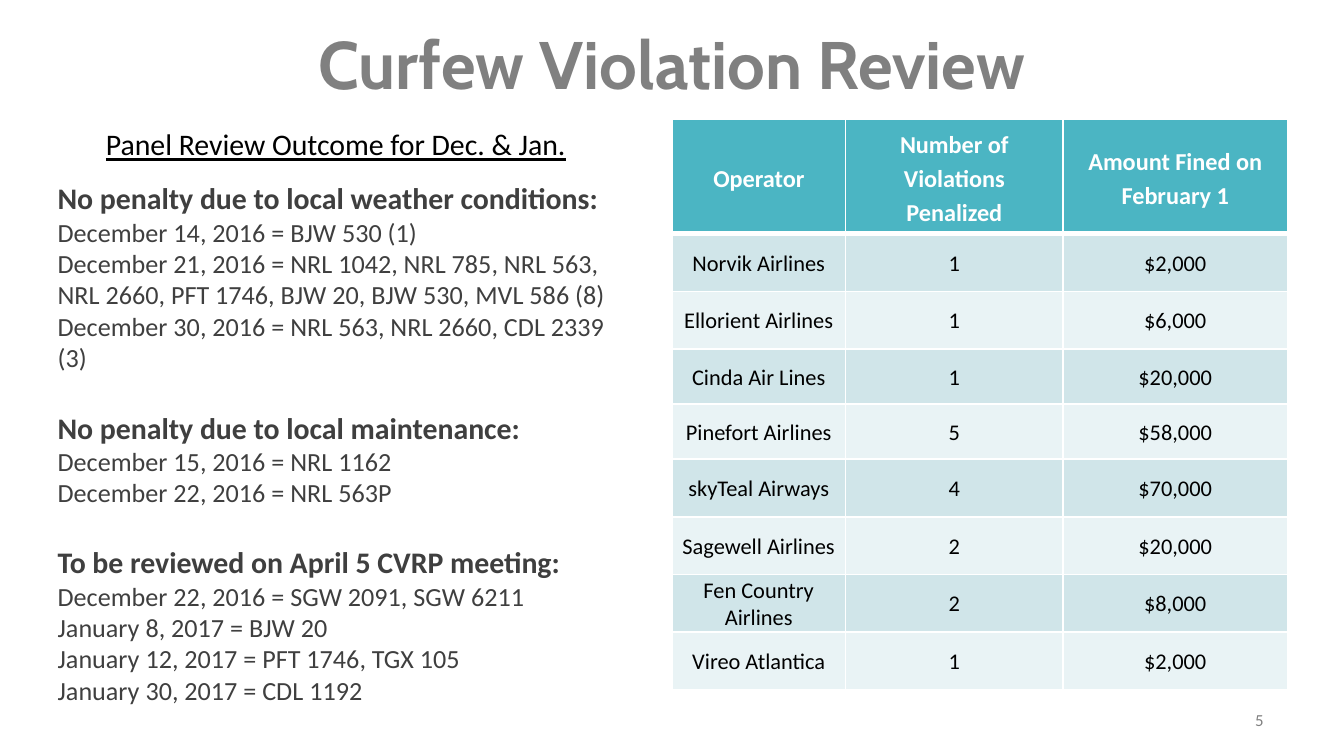
from lxml import etree
from pptx import Presentation
from pptx.dml.color import RGBColor
from pptx.enum.text import MSO_ANCHOR, PP_ALIGN
from pptx.oxml.ns import qn
from pptx.util import Cm, Pt

LEFT, CENTER, RIGHT = PP_ALIGN.LEFT, PP_ALIGN.CENTER, PP_ALIGN.RIGHT
TOP, MIDDLE = MSO_ANCHOR.TOP, MSO_ANCHOR.MIDDLE
COLORS = {
    "gray": "808080",
    "body": "3F3F3F",
    "black": "000000",
    "white": "FFFFFF",
    "header": "4BB5C3",
    "odd": "D0E5E9",
    "even": "E9F3F5",
}


def add_run(paragraph, text, size, color, align=LEFT, bold=False, font="Calibri"):
    paragraph.alignment = align
    run = paragraph.add_run()
    run.text = text
    run.font.name = font
    run.font.size = Pt(size)
    run.font.bold = bold
    run.font.color.rgb = RGBColor.from_string(COLORS[color])
    return run


def add_text_frame(slide, left, top, width, height, anchor=TOP):
    box = slide.shapes.add_textbox(Cm(left), Cm(top), Cm(width), Cm(height))
    box.text_frame.word_wrap = True
    box.text_frame.vertical_anchor = anchor
    return box.text_frame


prs = Presentation()
prs.slide_width, prs.slide_height = Cm(25.4), Cm(14.29)
slide = prs.slides.add_slide(prs.slide_layouts[6])

title = add_text_frame(slide, 0, 0, 25.4, 2.38, MIDDLE)
add_run(title.paragraphs[0], "Curfew Violation Review", 36, "gray", CENTER, True, "Cabin")

page_number = add_text_frame(slide, 18.2, 13.23, 5.93, 0.76, MIDDLE)
add_run(page_number.paragraphs[0], "5", 9, "gray", RIGHT)

subtitle = add_text_frame(slide, 0, 2.26, 12.7, 0.91)
heading = add_run(subtitle.paragraphs[0], "Panel Review Outcome for Dec. & Jan.", 16, "black", CENTER)
heading.font.underline = True

outcomes = [
    ("No penalty due to local weather conditions:", [
        "December 14, 2016 = BJW 530 (1)",
        "December 21, 2016 = NRL 1042, NRL 785, NRL 563, NRL 2660, PFT 1746, BJW 20, BJW 530, MVL 586 (8)",
        "December 30, 2016 = NRL 563, NRL 2660, CDL 2339 (3)",
    ]),
    ("No penalty due to local maintenance:", [
        "December 15, 2016 = NRL 1162",
        "December 22, 2016 = NRL 563P",
    ]),
    ("To be reviewed on April 5 CVRP meeting:", [
        "December 22, 2016 = SGW 2091, SGW 6211",
        "January 8, 2017 = BJW 20",
        "January 12, 2017 = PFT 1746, TGX 105",
        "January 30, 2017 = CDL 1192",
    ]),
]
review = add_text_frame(slide, 0.84, 3.28, 11.23, 10.26)
for index, (reason, flights) in enumerate(outcomes):
    paragraph = review.add_paragraph() if index else review.paragraphs[0]
    if index:
        paragraph.space_before = Pt(19.5)
    add_run(paragraph, reason, 16, "body", bold=True)
    for flight in flights:
        add_run(review.add_paragraph(), flight, 14, "body")

fines = [
    ("Operator", "Number of Violations Penalized", "Amount Fined on February 1"),
    ("Norvik Airlines", "1", "$2,000"),
    ("Ellorient Airlines", "1", "$6,000"),
    ("Cinda Air Lines", "1", "$20,000"),
    ("Pinefort Airlines", "5", "$58,000"),
    ("skyTeal Airways", "4", "$70,000"),
    ("Sagewell Airlines", "2", "$20,000"),
    ("Fen Country Airlines", "2", "$8,000"),
    ("Vireo Atlantica", "1", "$2,000"),
]
column_widths = [3.28, 4.11, 4.24]
row_heights = [2.16, 1.09, 1.09, 1.04, 1.04, 1.09, 1.09, 1.09, 1.09]
fine_table = slide.shapes.add_table(
    len(fines), len(column_widths), Cm(12.7), Cm(2.26),
    Cm(sum(column_widths)), Cm(sum(row_heights))).table
for column, width in zip(fine_table.columns, column_widths):
    column.width = Cm(width)

for row, (entries, height) in enumerate(zip(fines, row_heights)):
    fine_table.rows[row].height = Cm(height)
    is_header = row == 0
    for col, entry in enumerate(entries):
        cell = fine_table.cell(row, col)
        cell.vertical_anchor = MIDDLE
        if not is_header or col != 1:
            side = Cm(0 if is_header else 0.03)
            cell.margin_left = cell.margin_right = cell.margin_top = side
            cell.margin_bottom = 0
        properties = cell._tc.get_or_add_tcPr()
        for edge in ("L", "R", "T", "B"):
            thick = (is_header and edge == "B") or (row == 1 and edge == "T")
            border = etree.SubElement(properties, qn(f"a:ln{edge}"), w=str(Pt(3 if thick else 1)))
            line_fill = etree.SubElement(border, qn("a:solidFill"))
            etree.SubElement(line_fill, qn("a:srgbClr"), val=COLORS["white"])
        fill = "header" if is_header else "odd" if row % 2 else "even"
        cell.fill.solid()
        cell.fill.fore_color.rgb = RGBColor.from_string(COLORS[fill])
        paragraph = cell.text_frame.paragraphs[0]
        if is_header:
            paragraph.line_spacing = 1.15
            paragraph.space_before = paragraph.space_after = Pt(5)
            add_run(paragraph, entry, 13, "white", CENTER, True)
        else:
            add_run(paragraph, entry, 12, "black", CENTER)

prs.save("out.pptx")
